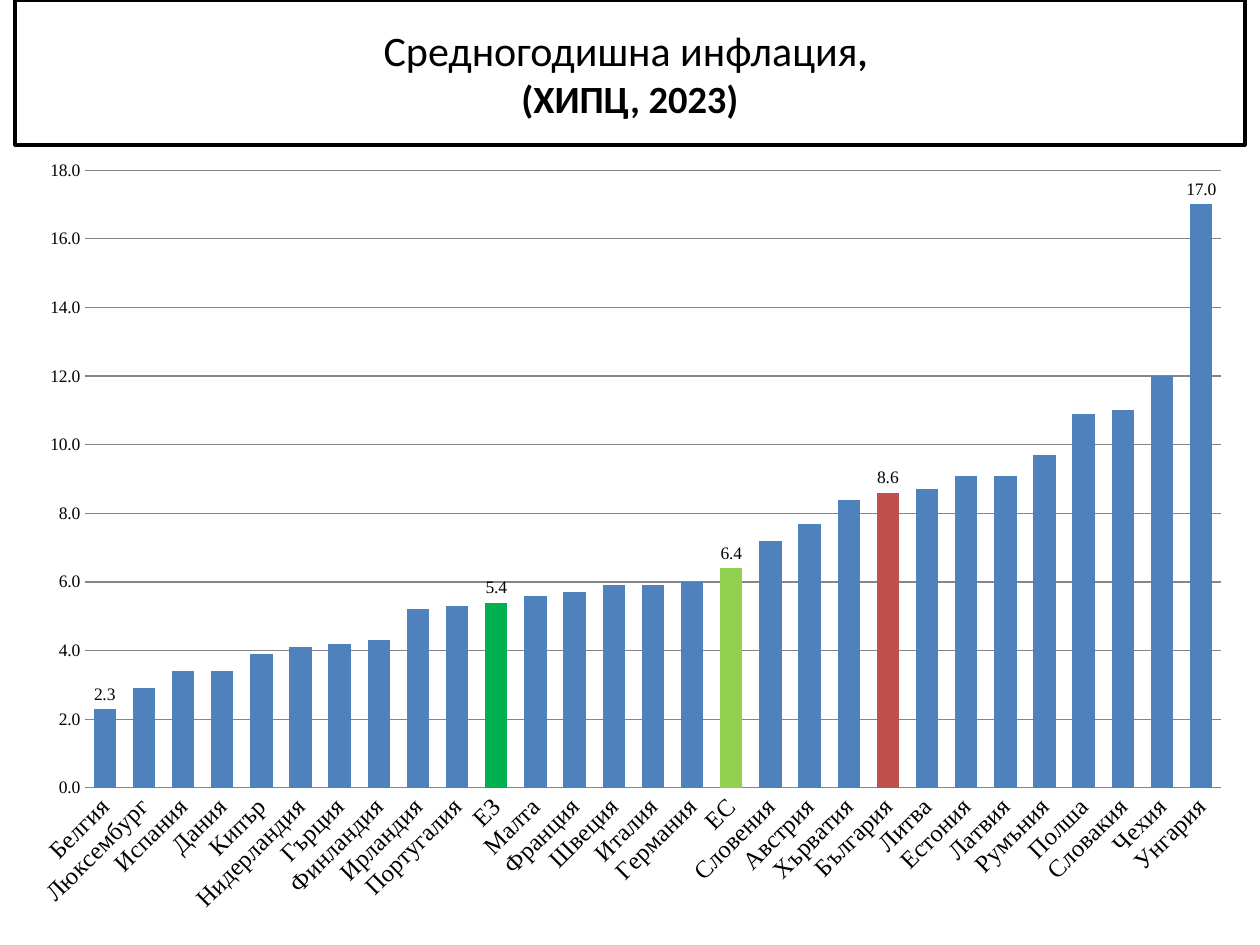
from lxml.etree import SubElement as Sub
from pptx import Presentation
from pptx.chart.data import CategoryChartData as Data
from pptx.dml.color import RGBColor
from pptx.enum.chart import XL_CHART_TYPE as Kind, XL_LABEL_POSITION as Spot
from pptx.enum.chart import XL_TICK_MARK as Tick
from pptx.enum.text import MSO_ANCHOR as Anchor, MSO_AUTO_SIZE as Auto, PP_ALIGN as Align
from pptx.oxml.ns import qn
from pptx.util import Pt

RATES = {
    "Белгия": 2.3, "Люксембург": 2.9, "Испания": 3.4, "Дания": 3.4,
    "Кипър": 3.9, "Нидерландия": 4.1, "Гърция": 4.2, "Финландия": 4.3,
    "Ирландия": 5.2, "Португалия": 5.3, "ЕЗ": 5.4, "Малта": 5.6,
    "Франция": 5.7, "Швеция": 5.9, "Италия": 5.9, "Германия": 6.0,
    "ЕС": 6.4, "Словения": 7.2, "Австрия": 7.7, "Хърватия": 8.4,
    "България": 8.6, "Литва": 8.7, "Естония": 9.1, "Латвия": 9.1,
    "Румъния": 9.7, "Полша": 10.9, "Словакия": 11.0, "Чехия": 12.0,
    "Унгария": 17.0,
}
TINTS = {"ЕЗ": "00B050", "ЕС": "92D050", "България": "C0504D"}
MARKED = ["Белгия", *TINTS, "Унгария"]
LEFT, WIDTH, SPLIT, HEIGHT = 8.64, 702.72, 82.8, 447.84
NUMBER = "#,##0.0"


def paint(part, color):
    """Give a fill or a line format a solid colour."""
    fill = part if hasattr(part, "solid") else part.fill
    fill.solid()
    fill.fore_color.rgb = RGBColor.from_string(color)


def style(font, size, name, color="000000", bold=False):
    """Set the size, face, colour and weight of a font."""
    font.size, font.name, font.bold = Pt(size), name, bold
    font.color.rgb = RGBColor.from_string(color)


def write(para, text, **form):
    """Add a formatted run to a paragraph."""
    run = para.add_run()
    run.text = text
    style(run.font, **form)


def head(slide):
    """Fill and frame the title placeholder."""
    title = slide.shapes.title
    title.left, title.top, title.width, title.height = Pt(LEFT), Pt(0), Pt(WIDTH), Pt(SPLIT)
    paint(title.fill, "FFFFFF")
    paint(title.line, "000000")
    title.line.width = Pt(2)
    frame = title.text_frame
    frame.word_wrap, frame.auto_size = True, Auto.NONE
    frame.vertical_anchor = Anchor.MIDDLE
    para = frame.paragraphs[0]
    para.alignment = Align.CENTER
    write(para, "Средногодишна инфлация", size=24, name="Calibri")
    write(para, ", ", size=22, name="Calibri", bold=True)
    para.add_line_break()
    write(para, "(ХИПЦ, 2023)", size=22, name="Calibri", bold=True)


def place(chart, x, y, w, h):
    """Fix the inner plot area, given in points within the chart."""
    area = chart.plots[0]._element.getparent()
    layout = area.find(qn("c:layout"))
    if layout is None:
        layout = Sub(area, qn("c:layout"))
        area.insert(0, layout)
    manual = Sub(layout, qn("c:manualLayout"))
    modes = {"layoutTarget": "inner", "xMode": "edge", "yMode": "edge"}
    box = {"x": x / WIDTH, "y": y / HEIGHT, "w": w / WIDTH, "h": h / HEIGHT}
    for tag, val in {**modes, **box}.items():
        Sub(manual, qn(f"c:{tag}")).set("val", str(val))


def slant(axis):
    """Turn the category labels by 45 degrees and show every one."""
    root = axis._element
    root.find(qn("c:txPr")).find(qn("a:bodyPr")).set("rot", "-2700000")
    skip = Sub(root, qn("c:tickLblSkip"))
    skip.set("val", "1")
    root.find(qn("c:noMultiLvlLbl")).addprevious(skip)


def axes(chart):
    """Format both axes and the gridlines."""
    cat, val = chart.category_axis, chart.value_axis
    for axis in (cat, val):
        axis.major_tick_mark = axis.minor_tick_mark = Tick.NONE
    style(cat.tick_labels.font, 14, "Times New Roman")
    slant(cat)
    paint(cat.format.line, "868686")
    val.minimum_scale, val.maximum_scale, val.major_unit = 0, 18, 2
    val.tick_labels.number_format = NUMBER
    val.tick_labels.number_format_is_linked = False
    val.format.line.fill.background()
    val.has_major_gridlines = True
    paint(val.major_gridlines.format.line, "868686")


def bars(chart):
    """Colour the columns and label the marked ones."""
    plot = chart.plots[0]
    plot.gap_width, plot.overlap, plot.vary_by_categories = 75, -25, False
    series = plot.series[0]
    paint(series.format.fill, "4F81BD")
    series.data_labels.show_value = False
    names = list(RATES)
    for name, color in TINTS.items():
        paint(series.points[names.index(name)].format.fill, color)
    for name in MARKED:
        label = series.points[names.index(name)].data_label
        label.position = Spot.OUTSIDE_END
        style(label.font, 10, "Times New Roman")


def graph(slide):
    """Add the column chart of inflation rates."""
    data = Data(number_format=NUMBER)
    data.categories = list(RATES)
    data.add_series("Series 1", list(RATES.values()))
    chart = slide.shapes.add_chart(
        Kind.COLUMN_CLUSTERED, Pt(LEFT), Pt(SPLIT), Pt(WIDTH), Pt(HEIGHT), data
    ).chart
    chart.has_legend = chart.has_title = False
    style(chart.font, 10, "Times New Roman")
    axes(chart)
    bars(chart)
    place(chart, x=40, y=14.5, w=649, h=353)


def main():
    """Build and save the slide."""
    deck = Presentation()
    deck.slide_width, deck.slide_height = Pt(720), Pt(540)
    slide = deck.slides.add_slide(deck.slide_layouts[5])
    head(slide)
    graph(slide)
    deck.save("out.pptx")


if __name__ == "__main__":
    main()
